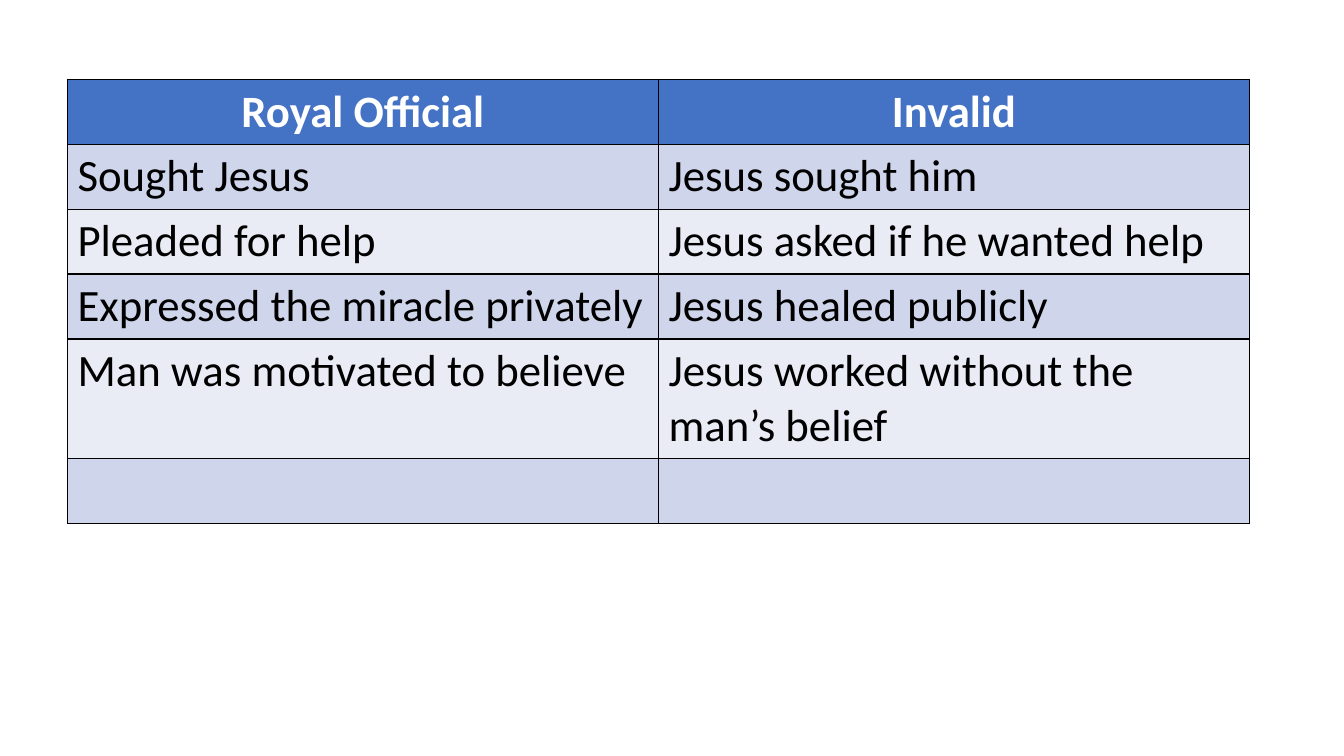
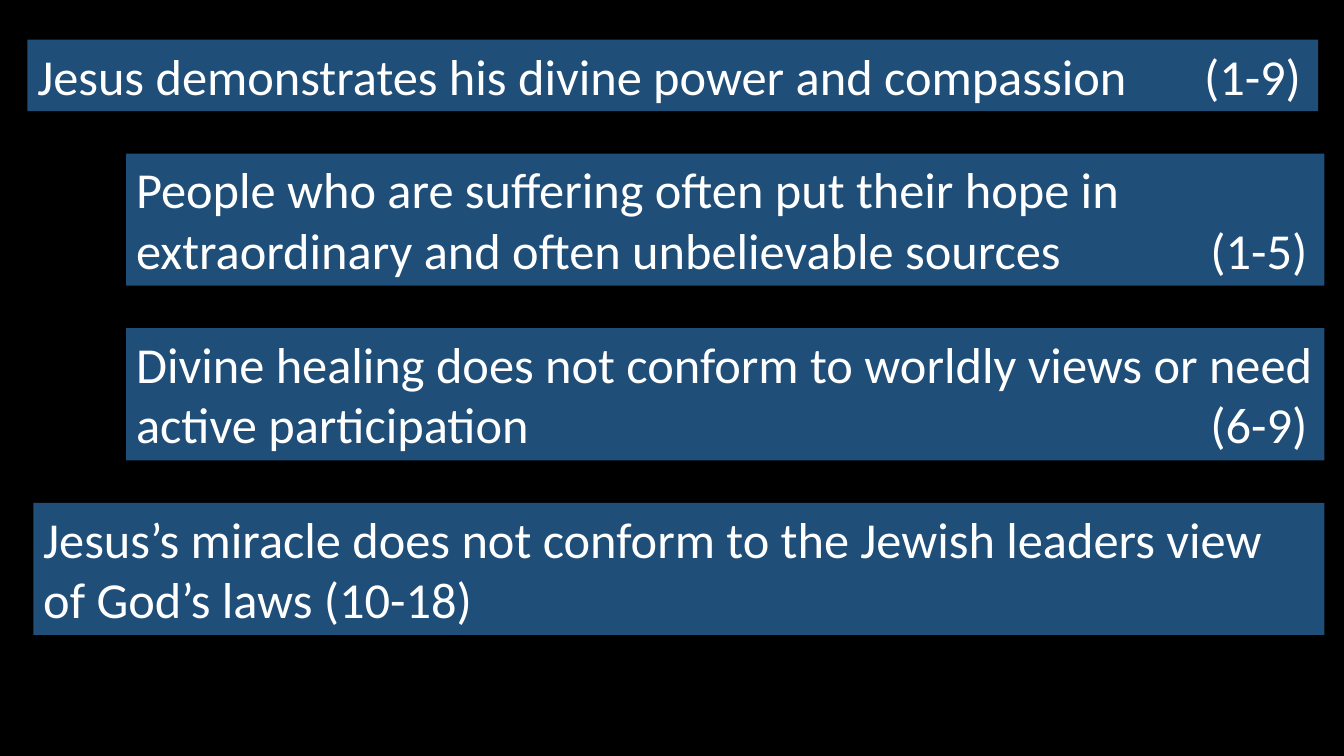
from dataclasses import dataclass

from lxml import etree
from pptx import Presentation
from pptx.dml.color import RGBColor
from pptx.enum.text import MSO_AUTO_SIZE, PP_ALIGN
from pptx.oxml.ns import qn
from pptx.util import Cm, Pt

CENTER = PP_ALIGN.CENTER
LEFT = PP_ALIGN.LEFT
GROW = MSO_AUTO_SIZE.SHAPE_TO_FIT_TEXT
BLANK_LAYOUT = 6


@dataclass(frozen=True)
class Theme:
    font: str = "Calibri"
    table_size: int = 32
    point_size: int = 36
    light: str = "FFFFFF"
    dark: str = "000000"
    header: str = "4472C4"
    bands: tuple = ("CFD5EA", "E9EBF5")
    point: str = "1F4E79"
    border: int = 1


def paint(fill, color):
    fill.solid()
    fill.fore_color.rgb = RGBColor.from_string(color)


class Deck:
    def __init__(self, theme):
        self.theme = theme
        self.prs = Presentation()
        self.prs.slide_width, self.prs.slide_height = Cm(33.87), Cm(19.05)
        self.slide = None

    def new_slide(self, background):
        layout = self.prs.slide_layouts[BLANK_LAYOUT]
        self.slide = self.prs.slides.add_slide(layout)
        paint(self.slide.background.fill, background)

    def add_text(self, paragraph, text, size, color, bold=False):
        run = paragraph.add_run()
        run.text = text
        run.font.name = self.theme.font
        run.font.size = Pt(size)
        run.font.bold = bold
        run.font.color.rgb = RGBColor.from_string(color)

    def outline_cell(self, cell):
        properties = cell._tc.get_or_add_tcPr()
        for side in ("lnL", "lnR", "lnT", "lnB"):
            line = etree.SubElement(properties, qn(f"a:{side}"),
                                    w=str(Pt(self.theme.border)))
            fill = etree.SubElement(line, qn("a:solidFill"))
            etree.SubElement(fill, qn("a:srgbClr"), val=self.theme.dark)

    def table(self, left, top, width, heights, rows):
        theme = self.theme
        grid = self.slide.shapes.add_table(
            len(rows), len(rows[0]), Cm(left), Cm(top), Cm(width), Cm(sum(heights))).table
        for index, (height, texts) in enumerate(zip(heights, rows)):
            grid.rows[index].height = Cm(height)
            is_header = index == 0
            band = theme.header if is_header else theme.bands[(index - 1) % 2]
            for column, text in enumerate(texts):
                cell = grid.cell(index, column)
                self.outline_cell(cell)
                paint(cell.fill, band)
                if text:
                    paragraph = cell.text_frame.paragraphs[0]
                    paragraph.alignment = CENTER if is_header else LEFT
                    self.add_text(paragraph, text, theme.table_size,
                                  theme.light if is_header else theme.dark, is_header)

    def point(self, left, top, right, height, text, verses=None):
        """Add a filled bar, with its verses set against a right tab stop."""
        width = right - left
        bar = self.slide.shapes.add_textbox(Cm(left), Cm(top), Cm(width), Cm(height))
        paint(bar.fill, self.theme.point)
        frame = bar.text_frame
        frame.word_wrap = True
        frame.auto_size = GROW
        paragraph = frame.paragraphs[0]
        self.add_text(paragraph, text, self.theme.point_size, self.theme.light)
        if verses:
            tabs = etree.SubElement(paragraph._p.get_or_add_pPr(), qn("a:tabLst"))
            etree.SubElement(tabs, qn("a:tab"), pos=str(Cm(width - 0.68)), algn="r")
            self.add_text(paragraph, f"\t{verses}", self.theme.point_size, self.theme.light)


COMPARISON = [
    ("Royal Official", "Invalid"),
    ("Sought Jesus", "Jesus sought him"),
    ("Pleaded for help", "Jesus asked if he wanted help"),
    ("Expressed the miracle privately", "Jesus healed publicly"),
    ("Man was motivated to believe", "Jesus worked without the man’s belief"),
    ("", ""),
]
ONE_LINE, TWO_LINES = 1.63, 3.02
COMPARISON_HEIGHTS = [ONE_LINE] * 4 + [TWO_LINES, ONE_LINE]

# left, right, height, text, verses
POINTS = [
    (0.69, 33.22, 1.8, "Jesus demonstrates his divine power and compassion", "(1-9)"),
    (3.18, 33.38, 3.33, "People who are suffering often put their hope in "
     "extraordinary and often unbelievable sources", "(1-5)"),
    (3.18, 33.38, 3.33, "Divine healing does not conform to worldly views or need "
     "active participation", "(6-9)"),
    (0.84, 33.38, 3.33, "Jesus’s miracle does not conform to the Jewish leaders view "
     "of God’s laws (10-18)", None),
]
POINTS_TOP, POINT_GAP = 1.0, 1.07


def main():
    theme = Theme()
    deck = Deck(theme)

    deck.new_slide(theme.light)
    deck.table(1.7, 2.0, 29.79, COMPARISON_HEIGHTS, COMPARISON)

    deck.new_slide(theme.dark)
    top = POINTS_TOP
    for left, right, height, text, verses in POINTS:
        deck.point(left, top, right, height, text, verses)
        top += height + POINT_GAP

    deck.prs.save("out.pptx")


if __name__ == "__main__":
    main()
